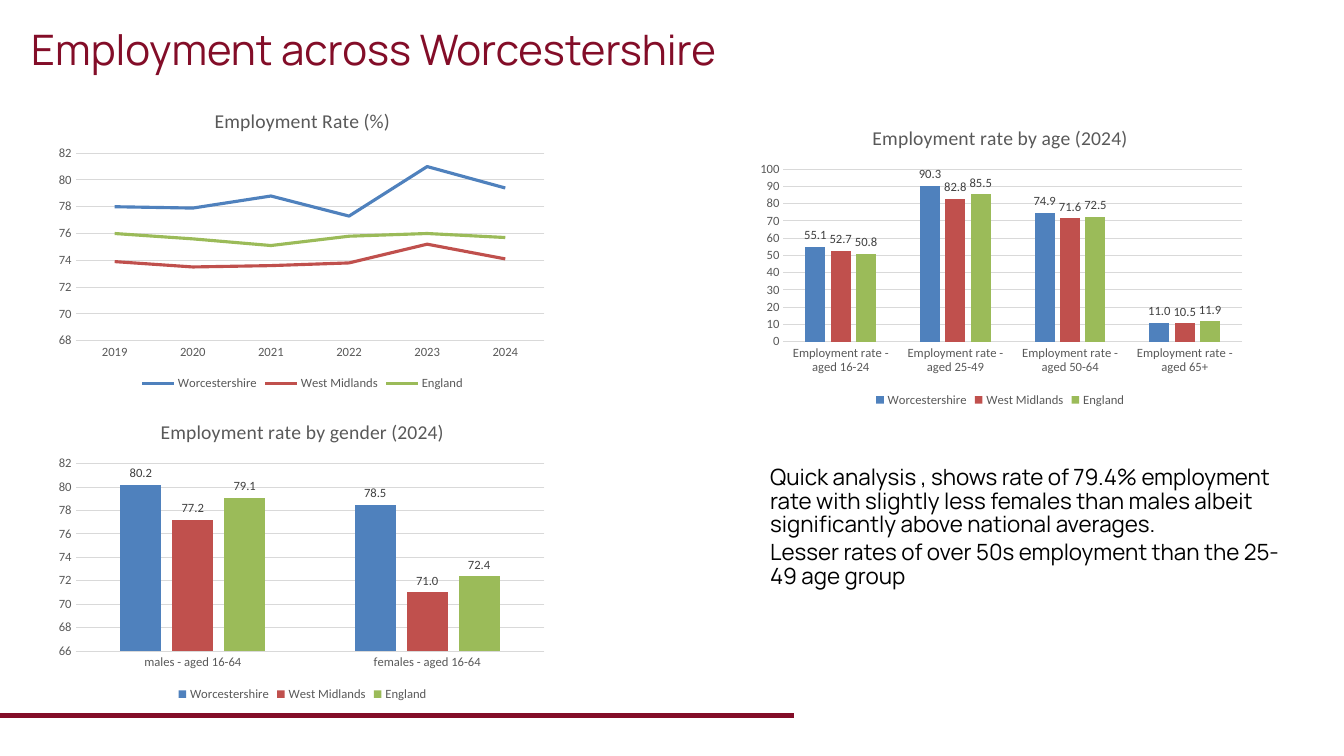
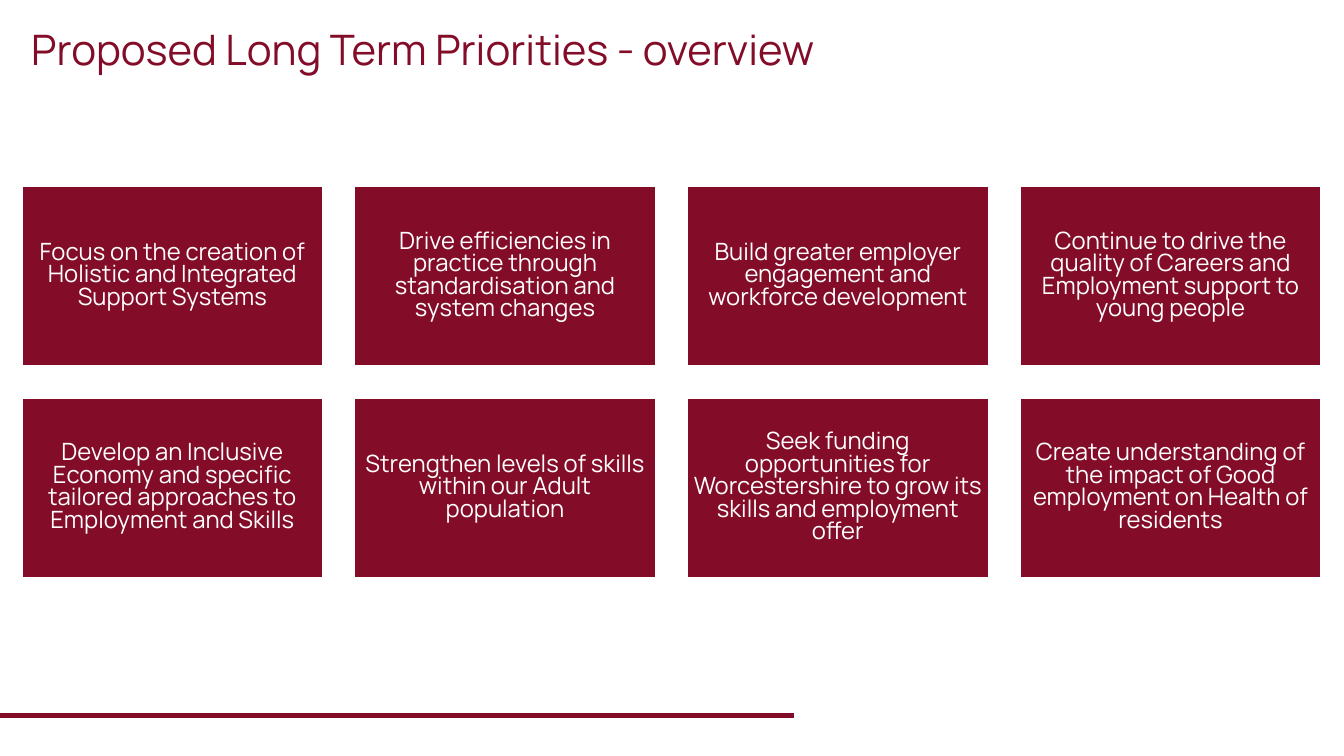
from lxml.etree import SubElement
from pptx import Presentation
from pptx.chart.data import CategoryChartData
from pptx.dml.color import RGBColor
from pptx.enum.chart import XL_CHART_TYPE as ChartType
from pptx.enum.chart import XL_LABEL_POSITION as LabelPosition
from pptx.enum.chart import XL_LEGEND_POSITION as LegendPosition
from pptx.enum.chart import XL_TICK_MARK as TickMark
from pptx.enum.shapes import MSO_CONNECTOR as Connector
from pptx.enum.shapes import MSO_SHAPE as Shape
from pptx.enum.text import MSO_ANCHOR as Anchor
from pptx.enum.text import MSO_AUTO_SIZE as AutoSize
from pptx.enum.text import PP_ALIGN as Align
from pptx.oxml.ns import qn
from pptx.util import Inches, Pt

# Shared look
MAROON, WHITE, BLACK = "830D28", "FFFFFF", "000000"
GREY, LABEL_GREY, GRID = "595959", "404040", "D9D9D9"
TEXT_FONT, CHART_FONT = "Manrope", "Calibri"
REGIONS = {"Worcestershire": "4F81BD", "West Midlands": "C0504D", "England": "9BBB59"}


def colour(code):
    return RGBColor.from_string(code)


def style_font(font, size, code, name=TEXT_FONT):
    font.size = Pt(size)
    font.name = name
    font.color.rgb = colour(code)


def style_line(line, code, width):
    line.color.rgb = colour(code)
    line.width = Pt(width)


def set_insets(frame, side, top):
    frame.margin_left = frame.margin_right = Inches(side)
    frame.margin_top = frame.margin_bottom = Inches(top)


def add_page(deck, title):
    """Title-only slide with the shared title style and footer rule."""
    page = deck.slides.add_slide(deck.slide_layouts[5])
    rule = page.shapes.add_connector(
        Connector.STRAIGHT, 0, Inches(7.1), Inches(7.88), Inches(7.1))
    style_line(rule.line, MAROON, 3.75)
    SubElement(rule._element.spPr, qn("a:effectLst"))

    box = page.shapes.title
    box.left, box.top = Inches(0.21), Inches(0.2)
    box.width, box.height = Inches(12.92), Inches(0.55)
    frame = box.text_frame
    frame.text = title
    frame.auto_size = AutoSize.NONE
    frame.vertical_anchor = Anchor.TOP
    set_insets(frame, 0.1, 0.03)
    para = frame.paragraphs[0]
    para.alignment = Align.LEFT
    style_font(para.runs[0].font, 30, MAROON)
    return page


def set_plot_area(chart, left, height):
    """Fix the inner plot area, as fractions of the chart."""
    plot_area = chart._chartSpace.chart.plotArea
    for old in plot_area.findall(qn("c:layout")):
        plot_area.remove(old)
    layout = plot_area.makeelement(qn("c:layout"))
    plot_area.insert(0, layout)
    manual = SubElement(layout, qn("c:manualLayout"))
    settings = {"layoutTarget": "inner", "xMode": "edge", "yMode": "edge",
                "x": left, "y": 0.2, "w": 0.98 - left, "h": height}
    for tag, value in settings.items():
        SubElement(manual, qn(f"c:{tag}")).set("val", str(value))


def style_axes(chart, low, high, step):
    categories, values = chart.category_axis, chart.value_axis
    for axis in (categories, values):
        axis.major_tick_mark = axis.minor_tick_mark = TickMark.NONE
        style_font(axis.tick_labels.font, 9, GREY, CHART_FONT)
    style_line(categories.format.line, GRID, 0.75)
    values.format.line.fill.background()
    values.has_major_gridlines = True
    style_line(values.major_gridlines.format.line, GRID, 0.75)
    values.minimum_scale, values.maximum_scale = low, high
    values.major_unit = step
    values.tick_labels.number_format = "#,##0"
    values.tick_labels.number_format_is_linked = False


def add_region_chart(page, left, top, kind, title, categories, rows, scale,
                     plot_left=0.05, plot_height=0.62):
    """Chart comparing the three regions, 5 by 3 inches."""
    data = CategoryChartData(number_format="#,##0.0")
    data.categories = categories
    for region, row in zip(REGIONS, rows):
        data.add_series(region, row)
    chart = page.shapes.add_chart(
        kind, Inches(left), Inches(top), Inches(5), Inches(3), data).chart
    style_font(chart.font, 10, BLACK, CHART_FONT)

    # Title and legend
    chart.has_title = True
    frame = chart.chart_title.text_frame
    frame.text = title
    title_font = frame.paragraphs[0].runs[0].font
    style_font(title_font, 14, GREY, CHART_FONT)
    title_font.bold = False
    chart.has_legend = True
    chart.legend.position = LegendPosition.BOTTOM
    chart.legend.include_in_layout = False
    style_font(chart.legend.font, 9, GREY, CHART_FONT)

    style_axes(chart, *scale)
    set_plot_area(chart, plot_left, plot_height)

    # Series
    plot = chart.plots[0]
    plot.vary_by_categories = False
    for series, code in zip(plot.series, REGIONS.values()):
        if kind == ChartType.LINE:
            series.smooth = False
            style_line(series.format.line, code, 2.25)
        else:
            series.format.fill.solid()
            series.format.fill.fore_color.rgb = colour(code)
    if kind == ChartType.COLUMN_CLUSTERED:
        plot.gap_width, plot.overlap = 219, -27
        plot.has_data_labels = True
        labels = plot.data_labels
        labels.show_value = True
        labels.position = LabelPosition.OUTSIDE_END
        labels.number_format = "#,##0.0"
        labels.number_format_is_linked = False
        style_font(labels.font, 9, LABEL_GREY, CHART_FONT)


def add_analysis(page, left, top, width, height, texts):
    box = page.shapes.add_textbox(
        Inches(left), Inches(top), Inches(width), Inches(height))
    frame = box.text_frame
    frame.word_wrap = True
    frame.text = "\n".join(texts)
    for index, para in enumerate(frame.paragraphs):
        para.line_spacing = 0.88
        if index:
            para.space_before = Pt(3)
        style_font(para.runs[0].font, 16, BLACK)


def add_card_grid(page, left, top, texts, columns=4, width=3, height=1.8, gap=0.3):
    for index, text in enumerate(texts):
        row, column = divmod(index, columns)
        card = page.shapes.add_shape(
            Shape.RECTANGLE,
            Inches(left + column * (width + gap)), Inches(top + row * (height + gap)),
            Inches(width), Inches(height))
        card.shadow.inherit = False
        card.fill.solid()
        card.fill.fore_color.rgb = colour(MAROON)
        style_line(card.line, WHITE, 2)
        frame = card.text_frame
        frame.word_wrap = True
        frame.vertical_anchor = Anchor.MIDDLE
        set_insets(frame, 0.06, 0.07)
        frame.text = text
        para = frame.paragraphs[0]
        para.alignment = Align.CENTER
        para.line_spacing = 0.79
        style_font(para.runs[0].font, 17, WHITE)


def build_employment(deck):
    page = add_page(deck, "Employment across Worcestershire")
    add_region_chart(
        page, 0.5, 0.92, ChartType.LINE, "Employment Rate (%)",
        [str(year) for year in range(2019, 2025)],
        [(78, 77.9, 78.8, 77.3, 81, 79.4),
         (73.9, 73.5, 73.6, 73.8, 75.2, 74.1),
         (76, 75.6, 75.1, 75.8, 76, 75.7)],
        (68, 82, 2))
    add_region_chart(
        page, 0.5, 4, ChartType.COLUMN_CLUSTERED, "Employment rate by gender (2024)",
        [f"{group} - aged 16-64" for group in ("males", "females")],
        [(80.2, 78.5), (77.2, 71), (79.1, 72.4)],
        (66, 82, 2))
    add_region_chart(
        page, 7.42, 1.08, ChartType.COLUMN_CLUSTERED, "Employment rate by age (2024)",
        [f"Employment rate - aged {ages}" for ages in ("16-24", "25-49", "50-64", "65+")],
        [(55.1, 90.3, 74.9, 11), (52.7, 82.8, 71.6, 10.5), (50.8, 85.5, 72.5, 11.9)],
        (0, 100, 10), plot_left=0.07, plot_height=0.57)
    add_analysis(page, 7.54, 4.58, 5.29, 1.83, [
        "Quick analysis , shows rate of 79.4% employment rate with slightly less "
        "females than males albeit significantly above national averages.",
        "Lesser rates of over 50s employment than the 25-49 age group"])


def build_priorities(deck):
    page = add_page(deck, "Proposed Long Term Priorities - overview")
    add_card_grid(page, 0.21, 1.84, [
        "Focus on the creation of Holistic and Integrated Support Systems",
        "Drive efficiencies in practice through standardisation and system changes",
        "Build greater employer engagement and workforce development",
        "Continue to drive the quality of Careers and Employment support to young people",
        "Develop an Inclusive Economy and specific tailored approaches to Employment and Skills",
        "Strengthen levels of skills within our Adult population",
        "Seek funding opportunities for Worcestershire to grow its skills and employment offer",
        "Create understanding of the impact of Good employment on Health of residents"])


def main():
    deck = Presentation()
    deck.slide_width, deck.slide_height = Inches(13.33), Inches(7.5)
    build_employment(deck)
    build_priorities(deck)
    deck.save("out.pptx")


if __name__ == "__main__":
    main()
